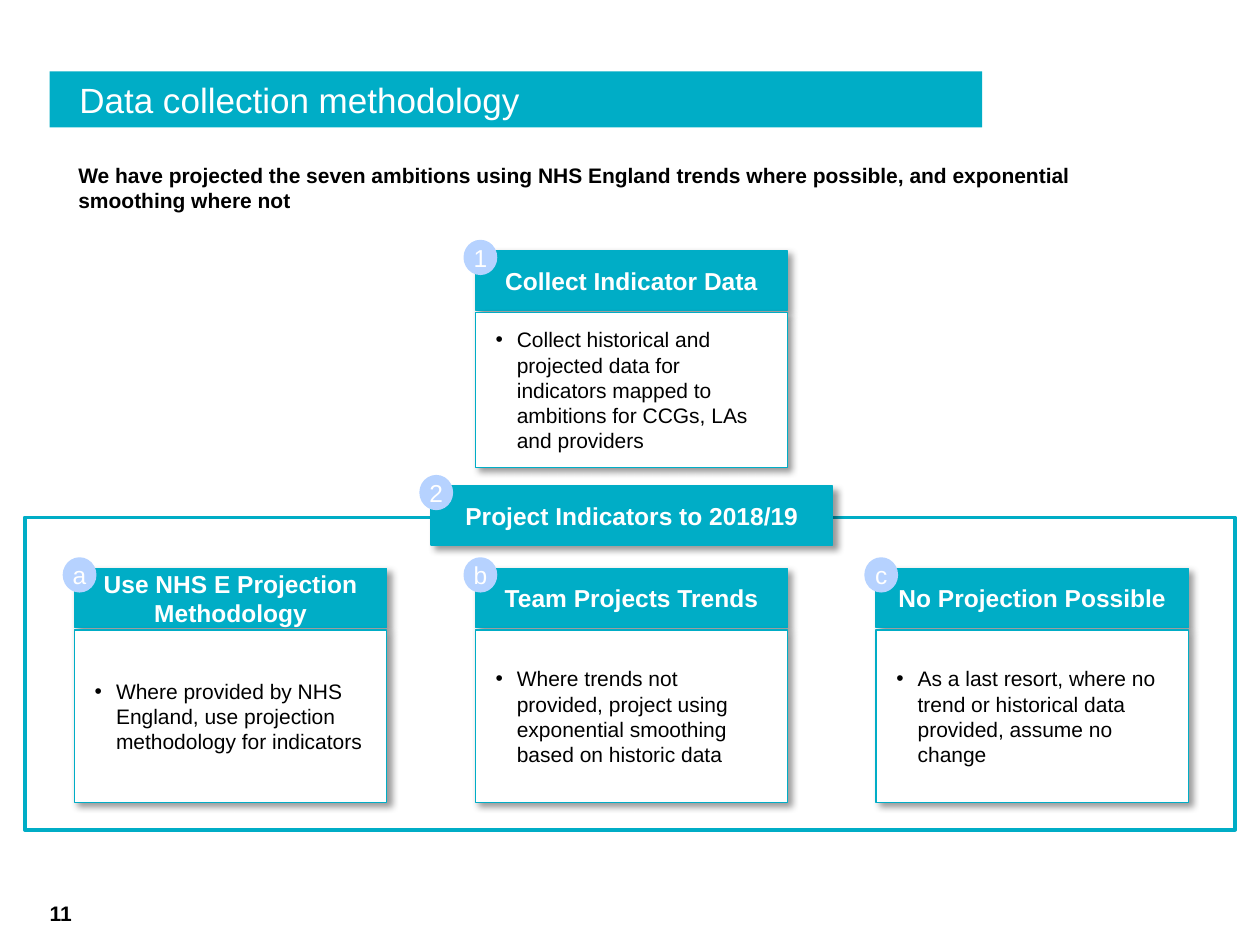
from lxml import etree
from pptx import Presentation
from pptx import util as u
from pptx.dml.color import RGBColor
from pptx.enum import shapes, text
from pptx.oxml import ns

TEAL, PALE, WHITE, BLACK = "00ADC6", "B6D2FF", "FFFFFF", "000000"
RECT, OVAL = shapes.MSO_SHAPE.RECTANGLE, shapes.MSO_SHAPE.OVAL
MID, LOW, TOP = (text.MSO_ANCHOR.MIDDLE, text.MSO_ANCHOR.BOTTOM,
                 text.MSO_ANCHOR.TOP)
LEFT, MIDX = text.PP_ALIGN.LEFT, text.PP_ALIGN.CENTER


def paint(fill, hue):
    fill.solid()
    fill.fore_color.rgb = RGBColor.from_string(hue)


def node(up, tag, **attrs):
    return etree.SubElement(up, ns.qn(tag), attrs)


class Deck:
    font = "Arial"
    wide, head = 6.3, 1.19

    def __init__(self, wide, high):
        self.prs = Presentation()
        self.prs.slide_width, self.prs.slide_height = u.Cm(wide), u.Cm(high)
        self.slide = self.prs.slides.add_slide(self.prs.slide_layouts[6])

    def letter(self, shape, words, size, hue, bold=False, align=LEFT,
               anchor=MID, pad=(0, 0, 0, 0), bullet=False):
        frame = shape.text_frame
        frame.word_wrap = True
        frame.vertical_anchor = anchor
        (frame.margin_left, frame.margin_top,
         frame.margin_right, frame.margin_bottom) = map(u.Cm, pad)
        para = frame.paragraphs[0]
        para.alignment = align
        if bullet:
            props = para._p.get_or_add_pPr()
            props.set("marL", str(u.Cm(0.66)))
            props.set("indent", str(u.Cm(-0.43)))
            node(props, "a:buFont", typeface=self.font)
            node(props, "a:buChar", char="•")
        run = para.add_run()
        run.text = words
        font = run.font
        font.name, font.size, font.bold = self.font, u.Pt(size), bold
        paint(font.fill, hue)

    def shape(self, kind, x, y, w, h, fill, line=None, width=0.75):
        shape = self.slide.shapes.add_shape(kind, *map(u.Cm, (x, y, w, h)))
        shape.shadow.inherit = False
        paint(shape.fill, fill)
        if line:
            paint(shape.line.fill, line)
            shape.line.width = u.Pt(width)
        else:
            shape.line.fill.background()
        return shape

    def shade(self, shape):
        effects = shape._element.spPr.find(ns.qn("a:effectLst"))
        outer = node(effects, "a:outerShdw", blurRad=str(u.Pt(4)),
                     dist=str(u.Pt(3)), dir="2700000", algn="tl",
                     rotWithShape="0")
        node(node(outer, "a:srgbClr", val=BLACK), "a:alpha", val="40000")

    def label(self, x, y, w, h, words, **style):
        box = self.slide.shapes.add_textbox(*map(u.Cm, (x, y, w, h)))
        self.letter(box, words, 12, BLACK, bold=True, **style)

    def banner(self, x, y, w, mark, words):
        bar = self.shape(RECT, x, y, w, self.head, TEAL, TEAL)
        self.shade(bar)
        self.letter(bar, words, 14, WHITE, bold=True, align=MIDX)
        badge = self.shape(OVAL, x - 0.2, y - 0.19, 0.61, 0.64, PALE, PALE, 2)
        self.letter(badge, mark, 14, WHITE, align=MIDX, pad=(0, 0.1, 0, 0.1))

    def card(self, x, y, h, mark, title, words):
        self.banner(x, y, self.wide, mark, title)
        body = self.shape(RECT, x, y + 1.24, self.wide, h, WHITE, TEAL)
        self.shade(body)
        self.letter(body, words, 12, BLACK, pad=(0.18, 0, 0.43, 0),
                    bullet=True)


def main():
    deck = Deck(25.4, 19.05)

    # Title and lead sentence
    title = deck.shape(RECT, 1, 1.44, 18.8, 1.13, TEAL)
    deck.letter(title, "Data collection methodology", 20, WHITE,
                pad=(0.6, 0, 0, 0))
    deck.label(1.3, 3.13, 22.8, 1.32,
               "We have projected the seven ambitions using NHS England trends "
               "where possible, and exponential smoothing where not",
               anchor=TOP, pad=(0.28, 0.15, 0.28, 0.15))

    # Step 2 frame, behind the cards
    deck.shape(RECT, 0.5, 10.43, 24.4, 6.3, WHITE, TEAL, 2)

    # Step 1
    left, pitch = 1.5, 8.08
    deck.card(left + pitch, 5.06, 3.12, "1", "Collect Indicator Data",
              "Collect historical and projected data for indicators mapped to "
              "ambitions for CCGs, LAs and providers")

    # Step 2 and its three options
    deck.banner(8.69, 9.8, 8.1, "2", "Project Indicators to 2018/19")
    options = [
        ("a", "Use NHS E Projection Methodology",
         "Where provided by NHS England, use projection methodology "
         "for indicators"),
        ("b", "Team Projects Trends",
         "Where trends not provided, project using exponential smoothing "
         "based on historic data"),
        ("c", "No Projection Possible",
         "As a last resort, where no trend or historical data provided, "
         "assume no change"),
    ]
    for i, option in enumerate(options):
        deck.card(left + i * pitch, 11.46, 3.48, *option)

    # Page number
    deck.label(1, 18.16, 0.84, 0.5, "11", anchor=LOW)

    deck.prs.save("out.pptx")


if __name__ == "__main__":
    main()
